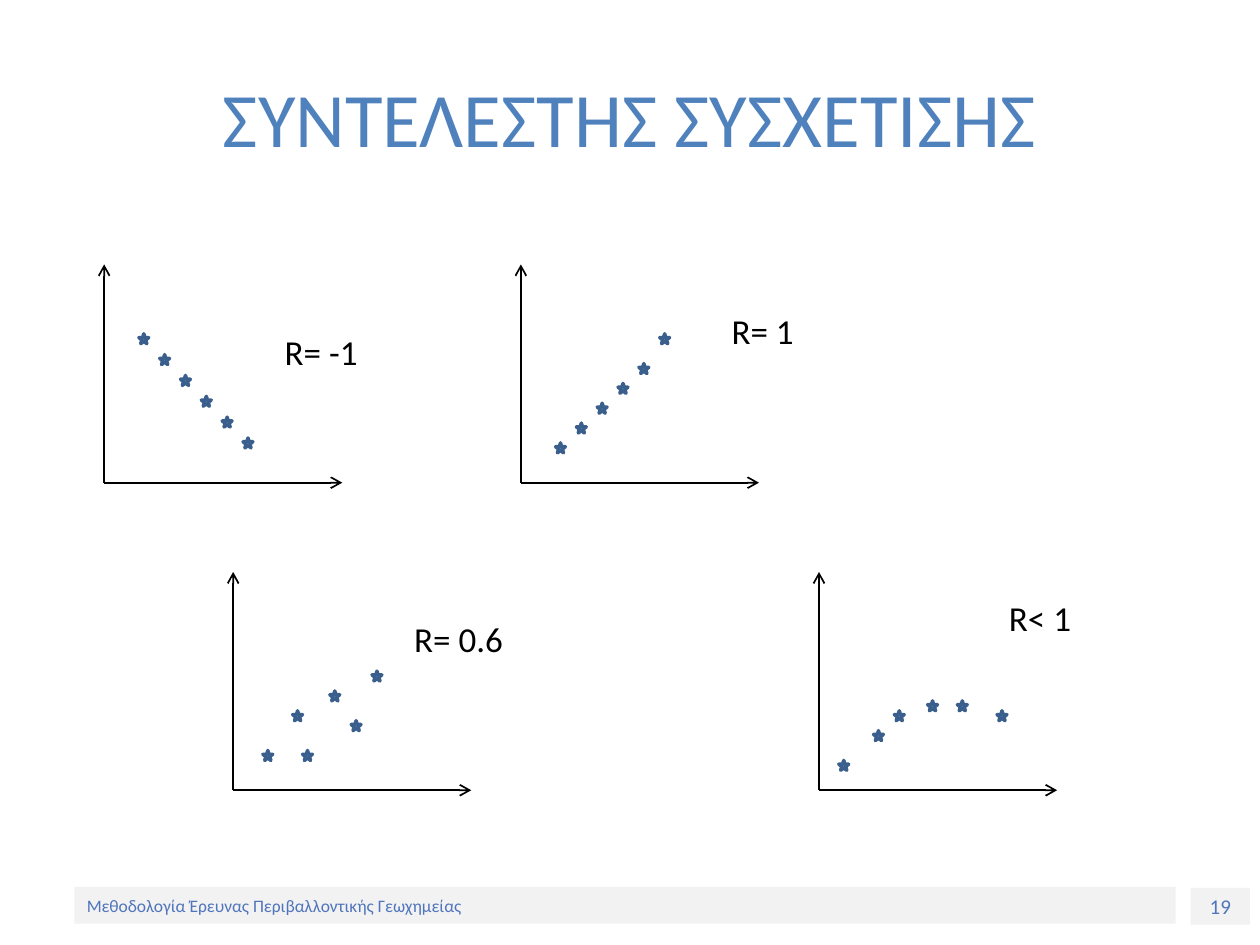
from lxml import etree
from pptx import Presentation
from pptx.dml.color import RGBColor
from pptx.enum.shapes import MSO_CONNECTOR, MSO_SHAPE
from pptx.enum.text import MSO_ANCHOR, MSO_AUTO_SIZE, PP_ALIGN
from pptx.oxml.ns import qn
from pptx.util import Cm, Pt

LINE = MSO_CONNECTOR.STRAIGHT
RECT, STAR = MSO_SHAPE.RECTANGLE, MSO_SHAPE.STAR_5_POINT
LEFT, CENTER = PP_ALIGN.LEFT, PP_ALIGN.CENTER
TOP, MIDDLE = MSO_ANCHOR.TOP, MSO_ANCHOR.MIDDLE
FIT_SHAPE = MSO_AUTO_SIZE.SHAPE_TO_FIT_TEXT

AXIS_W, AXIS_H = 4.8, 4.4
STAR_SIZE = 0.2
TOP_ROW, BOTTOM_ROW = 9.73, 15.93

# Origin, points as (right, up) from the origin, label, label box (all in cm)
PLOTS = [
    ((2.1, TOP_ROW),
     [(0.8 + 0.42 * i, 2.9 - 0.42 * i) for i in range(6)],
     "R= -1", (5.49, 6.53, 2.0, 1.12)),
    ((10.5, TOP_ROW),
     [(0.8 + 0.42 * i, 0.7 + 0.4 * i) for i in range(5)] + [(2.9, 2.9)],
     "R= 1", (14.5, 6.12, 1.78, 1.12)),
    ((16.51, BOTTOM_ROW),
     [(0.5, 0.5), (1.2, 1.1), (1.62, 1.5), (2.29, 1.7), (2.89, 1.7), (3.69, 1.5)],
     "R< 1", (20.09, 11.91, 1.78, 1.12)),
    ((4.7, BOTTOM_ROW),
     [(0.7, 0.7), (1.5, 0.7), (1.3, 1.5), (2.05, 1.9), (2.48, 1.3), (2.9, 2.3)],
     "R= 0.6", (8.1, 12.32, 2.31, 1.12)),
]


def rgb(value):
    return RGBColor.from_string(value)


class Deck:
    font = "Calibri"
    black, title_blue, footer_blue = "000000", "4F81BD", "5075BC"
    star_line, band = "3A5F8C", "F2F2F2"

    def __init__(self, s):
        self.s = s

    def fill_text(self, sp, text, size, color, align=LEFT, anchor=TOP, wrap=True):
        tf = sp.text_frame
        for name, value in {"word_wrap": wrap, "vertical_anchor": anchor}.items():
            setattr(tf, name, value)
        p = tf.paragraphs[0]
        p.alignment = align
        r = p.add_run()
        r.text = text
        for name, value in {"name": self.font, "size": Pt(size)}.items():
            setattr(r.font, name, value)
        r.font.color.rgb = rgb(color)

    def text(self, box, *args, **fmt):
        sp = self.s.shapes.add_textbox(*map(Cm, box))
        self.fill_text(sp, *args, **fmt)
        return sp

    def shape(self, kind, box, fill, line=None):
        sp = self.s.shapes.add_shape(kind, *map(Cm, box))
        sp.shadow.inherit = False
        sp.fill.solid()
        sp.fill.fore_color.rgb = rgb(fill)
        if line:
            sp.line.color.rgb = rgb(line)
            sp.line.width = Pt(2)
        else:
            sp.line.fill.background()
        return sp

    def footer(self, box, text, size, align=LEFT):
        sp = self.shape(RECT, box, self.band)
        self.fill_text(sp, text, size, self.footer_blue, align, MIDDLE)

    def arrow(self, x1, y1, x2, y2):
        sp = self.s.shapes.add_connector(LINE, Cm(x1), Cm(y1), Cm(x2), Cm(y2))
        sp.line.color.rgb = rgb(self.black)
        sp.line.width = Pt(1)
        props = sp.element.spPr
        etree.SubElement(props.find(qn("a:ln")), qn("a:tailEnd"), type="arrow")
        etree.SubElement(props, qn("a:effectLst"))

    def plot(self, origin, points):
        """Draw both axes and a star centred on each point."""
        x, y = origin
        self.arrow(x, y, x + AXIS_W, y)
        self.arrow(x, y, x, y - AXIS_H)
        half = STAR_SIZE / 2
        for right, up in points:
            box = (x + right - half, y - up - half, STAR_SIZE, STAR_SIZE)
            self.shape(STAR, box, self.title_blue, self.star_line)

    def label(self, box, text):
        sp = self.text(box, text, 20, self.black, wrap=False)
        sp.text_frame.auto_size = FIT_SHAPE


def main():
    prs = Presentation()
    prs.slide_width, prs.slide_height = Cm(25.4), Cm(19.05)
    deck = Deck(prs.slides.add_slide(prs.slide_layouts[6]))

    deck.footer((24, 17.9, 1.2, 0.74), "19", 12, CENTER)
    deck.footer((1.5, 17.88, 22.2, 0.74),
                "Μεθοδολογία Έρευνας Περιβαλλοντικής Γεωχημείας", 10)
    deck.text((1.27, 0.76, 22.86, 3.18), "ΣΥΝΤΕΛΕΣΤΗΣ ΣΥΣΧΕΤΙΣΗΣ", 44,
              deck.title_blue, align=CENTER, anchor=MIDDLE)
    for origin, points, label, box in PLOTS:
        deck.plot(origin, points)
        deck.label(box, label)

    prs.save("out.pptx")


if __name__ == "__main__":
    main()
